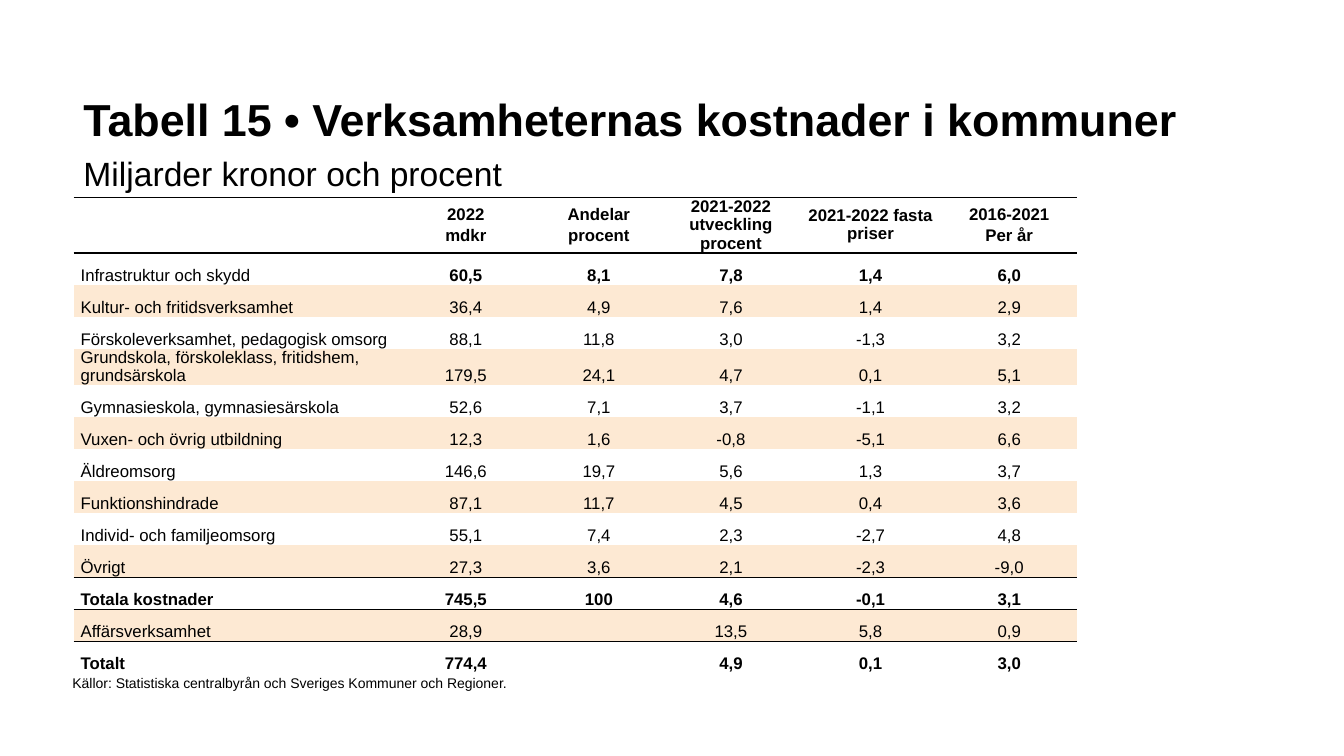
"""Builds a slide with a table of the costs of municipal services."""
from lxml.etree import SubElement as Sub
from pptx import Presentation
from pptx.dml.color import RGBColor as Rgb
from pptx.enum.text import MSO_ANCHOR as Anchor, PP_ALIGN as Align
from pptx.oxml.ns import qn
from pptx.util import Inches, Pt

TITLE = "Tabell 15 • Verksamheternas kostnader i kommuner"
UNITS = "Miljarder kronor och procent"
SOURCE = "Källor: Statistiska centralbyrån och Sveriges Kommuner och Regioner."
ROWS = [
    ("", "2022\nmdkr", "Andelar\nprocent", "2021-2022 utveckling procent",
     "2021-2022 fasta priser", "2016-2021\nPer år"),
    ("Infrastruktur och skydd", "60,5", "8,1", "7,8", "1,4", "6,0"),
    ("Kultur- och fritidsverksamhet", "36,4", "4,9", "7,6", "1,4", "2,9"),
    ("Förskoleverksamhet, pedagogisk omsorg", "88,1", "11,8", "3,0", "-1,3", "3,2"),
    ("Grundskola, förskoleklass, fritidshem, grundsärskola",
     "179,5", "24,1", "4,7", "0,1", "5,1"),
    ("Gymnasieskola, gymnasiesärskola", "52,6", "7,1", "3,7", "-1,1", "3,2"),
    ("Vuxen- och övrig utbildning", "12,3", "1,6", "-0,8", "-5,1", "6,6"),
    ("Äldreomsorg", "146,6", "19,7", "5,6", "1,3", "3,7"),
    ("Funktionshindrade", "87,1", "11,7", "4,5", "0,4", "3,6"),
    ("Individ- och familjeomsorg", "55,1", "7,4", "2,3", "-2,7", "4,8"),
    ("Övrigt", "27,3", "3,6", "2,1", "-2,3", "-9,0"),
    ("Totala kostnader", "745,5", "100", "4,6", "-0,1", "3,1"),
    ("Affärsverksamhet", "28,9", "", "13,5", "5,8", "0,9"),
    ("Totalt", "774,4", "", "4,9", "0,1", "3,0"),
]
WIDTHS = (3.2, 1.38, 1.26, 1.36, 1.41, 1.34)
HEIGHT = 4.72
TALL = {0: 0.55, 4: 0.36}
BOLD = (0, 11, 13)
RULED = (0, 1, 11, 12, 13)
COLORS = {"text": "000000", "rule": "000000", "band": "FDE9D3"}


def write(para, text, size=12, bold=False, align=Align.LEFT, line=None, before=0, after=0):
    para.alignment = align
    para.line_spacing = line
    para.space_before, para.space_after = Pt(before), Pt(after)
    run = para.add_run()
    run.text = text
    font = run.font
    font.name, font.size, font.bold = "Arial", Pt(size), bold
    font.color.rgb = Rgb.from_string(COLORS["text"])


def add_box(slide, left, top, width, height):
    frame = slide.shapes.add_textbox(*map(Inches, (left, top, width, height))).text_frame
    frame.word_wrap = True
    frame.vertical_anchor = Anchor.TOP
    return frame.paragraphs[0]


def set_rules(cell, sides):
    props = cell._tc.get_or_add_tcPr()
    for side in "LRTB":
        edge = Sub(props, qn(f"a:ln{side}"), w=str(Pt(1)))
        if side in sides:
            color = Sub(Sub(edge, qn("a:solidFill")), qn("a:srgbClr"))
            color.set("val", COLORS["rule"])
        else:
            Sub(edge, qn("a:noFill"))


def fill_cell(cell, text, row, col):
    set_rules(cell, "T" * (row in RULED) + "B" * (row + 1 in RULED))
    if row and row % 2 == 0:
        cell.fill.solid()
        cell.fill.fore_color.rgb = Rgb.from_string(COLORS["band"])
    else:
        cell.fill.background()
    cell.margin_left = cell.margin_right = Inches(0.07)
    cell.margin_top = cell.margin_bottom = 0
    cell.vertical_anchor = Anchor.BOTTOM if row else Anchor.MIDDLE
    frame = cell.text_frame
    for i, part in enumerate(text.split("\n")):
        para = frame.add_paragraph() if i else frame.paragraphs[0]
        write(para, part, bold=row in BOLD or (row == 1 and col > 0),
              align=Align.CENTER if col else Align.LEFT,
              line=Pt(13), before=1 if i else 0, after=1)


def add_costs(slide):
    place = map(Inches, (0.73, 1.96, sum(WIDTHS), HEIGHT))
    table = slide.shapes.add_table(len(ROWS), len(WIDTHS), *place).table
    table.first_row = table.horz_banding = False
    for col, width in zip(table.columns, WIDTHS):
        col.width = Inches(width)
    rest = (HEIGHT - sum(TALL.values())) / (len(ROWS) - len(TALL))
    for r, texts in enumerate(ROWS):
        table.rows[r].height = Inches(TALL.get(r, rest))
        for c, text in enumerate(texts):
            fill_cell(table.cell(r, c), text, r, c)


def main():
    deck = Presentation()
    deck.slide_width, deck.slide_height = Inches(13.33), Inches(7.5)
    slide = deck.slides.add_slide(deck.slide_layouts[6])
    head = add_box(slide, 0.73, 0.75, 12.5, 1.2)
    write(head, TITLE, size=32, bold=True)
    head.add_line_break()
    write(head, UNITS, size=24, line=1.2)
    add_costs(slide)
    write(add_box(slide, 0.62, 6.64, 6.67, 0.27), SOURCE, size=10)
    deck.save("out.pptx")


if __name__ == "__main__":
    main()
